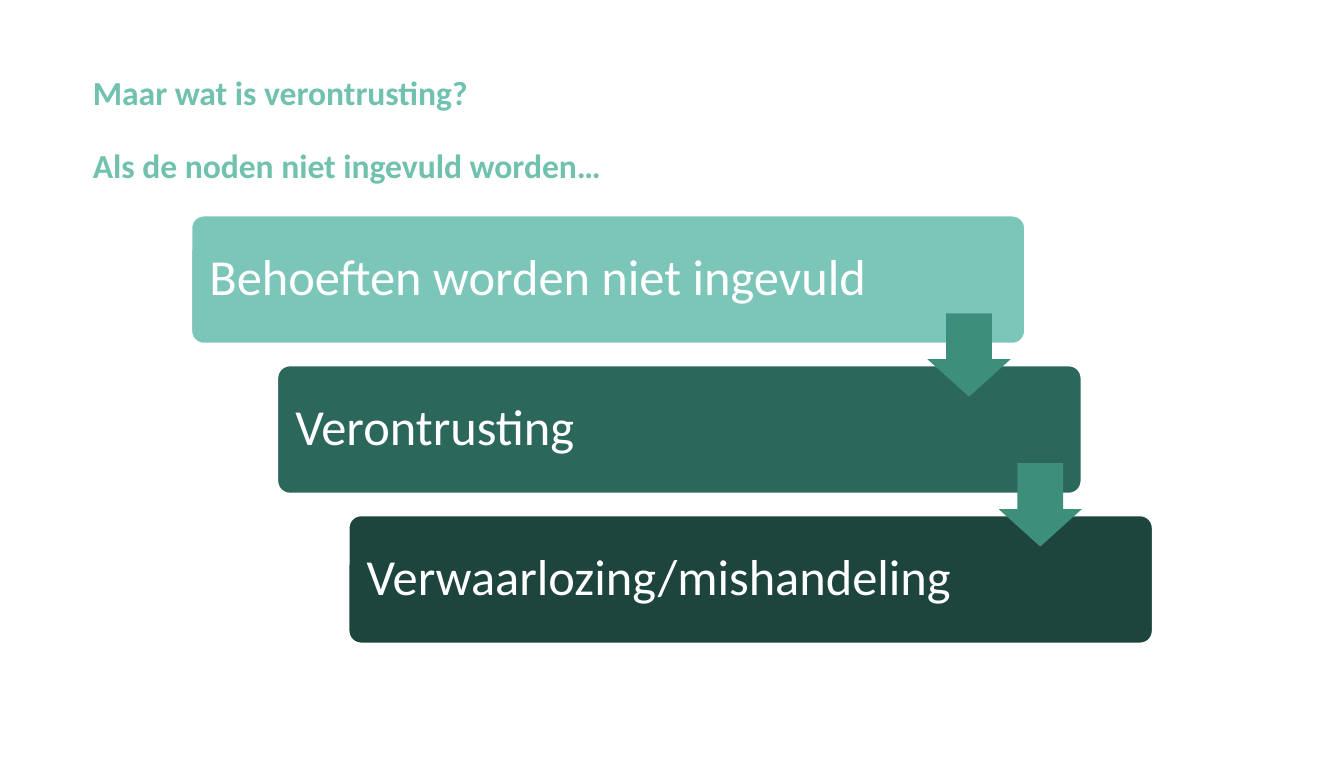
from dataclasses import dataclass

from pptx import Presentation
from pptx.dml.color import RGBColor
from pptx.enum.shapes import MSO_SHAPE
from pptx.enum.text import MSO_ANCHOR, PP_ALIGN
from pptx.util import Inches, Pt

ROUNDED = MSO_SHAPE.ROUNDED_RECTANGLE
DOWN_ARROW = MSO_SHAPE.DOWN_ARROW
MIDDLE, BOTTOM = MSO_ANCHOR.MIDDLE, MSO_ANCHOR.BOTTOM
LEFT = PP_ALIGN.LEFT

FONT = "Calibri"
WHITE = RGBColor(0xFF, 0xFF, 0xFF)
MINT = RGBColor(0x71, 0xC1, 0xAF)
LIGHT_GREEN = RGBColor(0x7B, 0xC6, 0xB8)
MID_GREEN = RGBColor(0x2C, 0x67, 0x5C)
DARK_GREEN = RGBColor(0x1D, 0x44, 0x3D)
ARROW_GREEN = RGBColor(0x3E, 0x8E, 0x7C)

STEP_TOP, STEP_PITCH, STEP_HEIGHT = 1.6, 1.115, 0.96
ARROW_SIZE, ARROW_DROP = 0.62, 0.73


@dataclass
class Step:
    text: str
    left: float
    width: float
    color: RGBColor


@dataclass
class Arrow:
    left: float
    step: int  # index of the step the arrow leaves


STEPS = [
    Step("Behoeften worden niet ingevuld", 1.42, 6.21, LIGHT_GREEN),
    Step("Verontrusting", 2.06, 5.99, MID_GREEN),
    Step("Verwaarlozing/mishandeling", 2.59, 5.99, DARK_GREEN),
]
ARROWS = [Arrow(6.9, 0), Arrow(7.43, 1)]
TITLE_LINES = ["Maar wat is verontrusting?", "Als de noden niet ingevuld worden…"]


def set_frame(tf, anchor, inset: float) -> None:
    tf.word_wrap = True
    tf.vertical_anchor = anchor
    tf.margin_left = tf.margin_right = Inches(inset)
    tf.margin_top = tf.margin_bottom = Inches(inset)


def add_run(p, text: str, size: float, color: RGBColor, bold: bool = False) -> None:
    p.alignment = LEFT
    p.line_spacing = 0.9
    r = p.add_run()
    r.text = text
    r.font.name = FONT
    r.font.size = Pt(size)
    r.font.bold = bold
    r.font.color.rgb = color


def add_title(s, lines: list[str]) -> None:
    box = s.shapes.add_textbox(Inches(0.69), Inches(0.29), Inches(8.62), Inches(1.09))
    tf = box.text_frame
    set_frame(tf, BOTTOM, 0)
    for i, line in enumerate(lines):
        p = tf.add_paragraph() if i else tf.paragraphs[0]
        if i:
            p.space_before = Pt(19.8)
        add_run(p, line, 18, MINT, bold=True)


def add_step(s, step: Step, index: int) -> None:
    sp = s.shapes.add_shape(ROUNDED, Inches(step.left), Inches(STEP_TOP + index * STEP_PITCH),
                            Inches(step.width), Inches(STEP_HEIGHT))
    sp.adjustments[0] = 0.1
    sp.shadow.inherit = False
    sp.fill.solid()
    sp.fill.fore_color.rgb = step.color
    sp.line.color.rgb = WHITE
    sp.line.width = Pt(1.5)
    set_frame(sp.text_frame, MIDDLE, 0.11)
    add_run(sp.text_frame.paragraphs[0], step.text, 27, WHITE)


def add_arrow(s, arrow: Arrow) -> None:
    top = STEP_TOP + arrow.step * STEP_PITCH + ARROW_DROP
    sp = s.shapes.add_shape(DOWN_ARROW, Inches(arrow.left), Inches(top),
                            Inches(ARROW_SIZE), Inches(ARROW_SIZE))
    sp.adjustments[0] = 0.55
    sp.adjustments[1] = 0.45
    sp.shadow.inherit = False
    sp.fill.solid()
    sp.fill.fore_color.rgb = ARROW_GREEN
    sp.line.fill.background()


def main() -> None:
    prs = Presentation()
    prs.slide_width, prs.slide_height = Inches(10), Inches(5.63)
    s = prs.slides.add_slide(prs.slide_layouts[6])

    # Title
    add_title(s, TITLE_LINES)

    # Staircase of steps, with the arrows on top
    for i, step in enumerate(STEPS):
        add_step(s, step, i)
    for arrow in ARROWS:
        add_arrow(s, arrow)

    prs.save("out.pptx")


if __name__ == "__main__":
    main()
